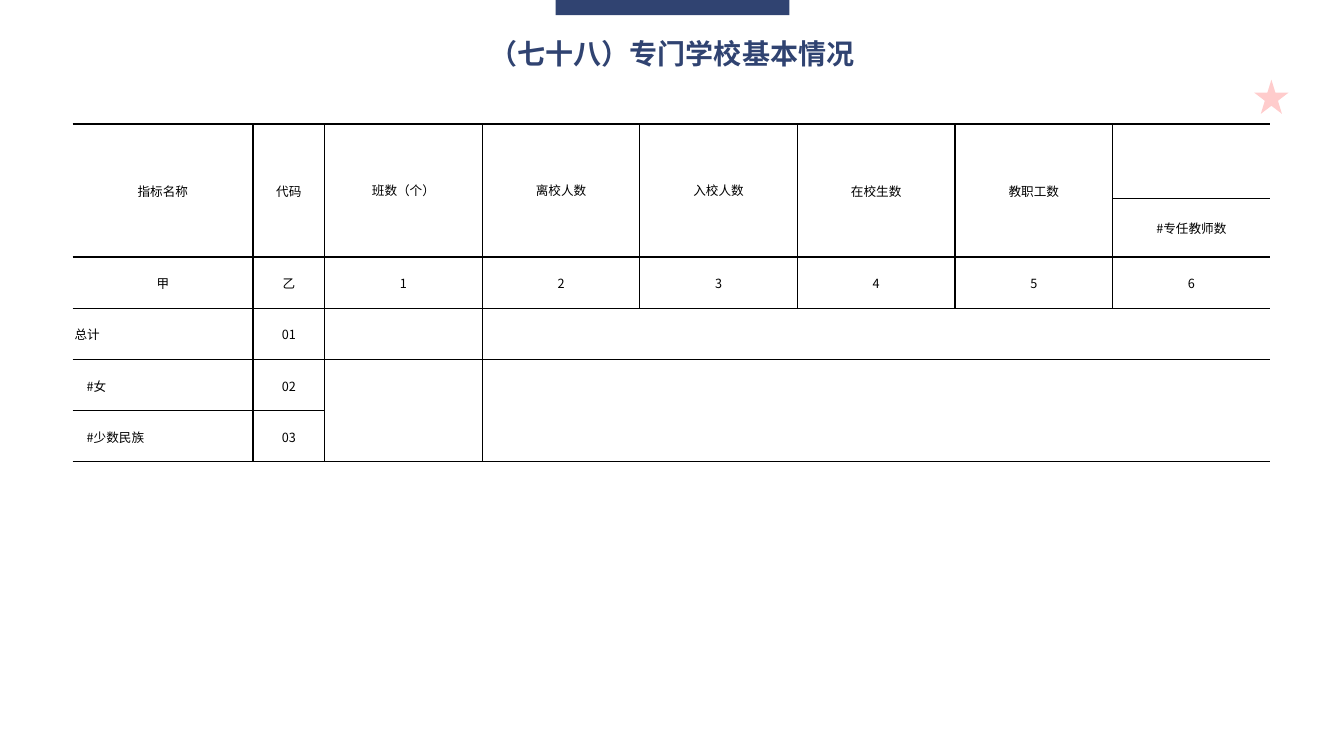
from dataclasses import dataclass
from itertools import groupby

from lxml import etree
from pptx import Presentation
from pptx.dml.color import RGBColor
from pptx.enum.shapes import MSO_SHAPE
from pptx.enum.text import MSO_ANCHOR, MSO_AUTO_SIZE, PP_ALIGN
from pptx.oxml.ns import qn
from pptx.util import Inches, Pt


@dataclass(frozen=True)
class Theme:
    navy: str = "304371"
    red: str = "FF0000"
    black: str = "000000"
    title_font: str = "Arial"
    text_font: str = "Times New Roman"
    code_font: str = "Noto Sans CJK SC"
    title_size: int = 20
    cell_size: int = 9
    line_spacing: int = 14
    border_width: int = 1


THEME = Theme()
NO_GRID_STYLE = "{2D5ABB26-0587-4C30-8999-92F81FD0307C}"

# Table content and geometry
HEADERS = ["指标名称", "代码", "班数（个）", "离校人数", "入校人数", "在校生数", "教职工数", ""]
ROWS = [
    HEADERS,
    [""] * 7 + ["#专任教师数"],
    ["甲", "乙", "1", "2", "3", "4", "5", "6"],
    ["总计", "01"],
    ["#女", "02"],
    ["#少数民族", "03"],
]
NATURAL_SPACING_COLUMNS = (2, 3, 4)
LEFT, TOP, WIDTH, HEIGHT = 0.72, 1.23, 11.88, 3.35
LABEL_WIDTHS = [1.79, 0.71]
HEADER_HEIGHTS = [0.74, 0.58]
COLUMN_WIDTHS = LABEL_WIDTHS + [(WIDTH - sum(LABEL_WIDTHS)) / 6] * 6
ROW_HEIGHTS = HEADER_HEIGHTS + [(HEIGHT - sum(HEADER_HEIGHTS)) / 4] * 4


def style_run(run, font_name, size, color, bold=False):
    run.font.name = font_name
    run.font.size = Pt(size)
    run.font.bold = bold
    run.font.color.rgb = RGBColor.from_string(color)


def add_decoration(slide, kind, left, top, width, height, color, alpha=None):
    shape = slide.shapes.add_shape(
        kind, Inches(left), Inches(top), Inches(width), Inches(height))
    shape.shadow.inherit = False
    shape.fill.solid()
    shape.fill.fore_color.rgb = RGBColor.from_string(color)
    shape.line.fill.background()
    if alpha is not None:
        color_element = shape._element.spPr.find(qn("a:solidFill"))[0]
        etree.SubElement(color_element, qn("a:alpha"), val=str(alpha * 1000))


def add_title(slide, text):
    box = slide.shapes.add_textbox(
        Inches(4.74), Inches(0.31), Inches(3.85), Inches(0.44))
    frame = box.text_frame
    frame.text = text
    frame.word_wrap = False
    frame.auto_size = MSO_AUTO_SIZE.SHAPE_TO_FIT_TEXT
    paragraph = frame.paragraphs[0]
    paragraph.alignment = PP_ALIGN.CENTER
    style_run(paragraph.runs[0], THEME.title_font, THEME.title_size, THEME.navy, True)


def border_sides(row, column):
    """Sides with a line, in the order the cell properties require."""
    if row >= 3 and column >= 2:  # open data area, framed only on the outside
        rules = {"L": column == 2, "T": row == 3, "B": row == 5}
    else:
        rules = {
            "L": column > 0 and (row, column) != (0, 7),
            "R": column < 7 and (row, column) != (0, 6),
            "T": True,
            "B": True,
        }
    return [side for side, drawn in rules.items() if drawn]


def draw_borders(cell, sides):
    properties = cell._tc.get_or_add_tcPr()
    for side in sides:
        line = etree.SubElement(
            properties, qn(f"a:ln{side}"), w=str(Pt(THEME.border_width)))
        fill = etree.SubElement(line, qn("a:solidFill"))
        etree.SubElement(fill, qn("a:srgbClr"), val=THEME.black)


def fill_cell(cell, text, row, column):
    cell.margin_left = cell.margin_right = Inches(0.02)
    cell.margin_top = cell.margin_bottom = 0
    cell.vertical_anchor = MSO_ANCHOR.MIDDLE
    paragraph = cell.text_frame.paragraphs[0]
    is_row_label = row >= 3 and column == 0
    paragraph.alignment = PP_ALIGN.JUSTIFY if is_row_label else PP_ALIGN.CENTER
    if is_row_label and text.startswith("#"):
        paragraph._p.get_or_add_pPr().set("indent", str(Inches(0.12)))
    if row > 0 or column not in NATURAL_SPACING_COLUMNS:
        paragraph.line_spacing = Pt(THEME.line_spacing)
    # Digits and signs use one font, Chinese words the other
    for is_ascii, letters in groupby(text, str.isascii):
        run = paragraph.add_run()
        run.text = "".join(letters)
        font_name = THEME.code_font if is_ascii else THEME.text_font
        style_run(run, font_name, THEME.cell_size, THEME.black)


def add_statistics_table(slide):
    frame = slide.shapes.add_table(
        len(ROW_HEIGHTS), len(COLUMN_WIDTHS),
        Inches(LEFT), Inches(TOP), Inches(WIDTH), Inches(HEIGHT))
    table = frame.table
    table.first_row = table.horz_banding = False
    table._tbl.tblPr.find(qn("a:tableStyleId")).text = NO_GRID_STYLE
    for column, width in zip(table.columns, COLUMN_WIDTHS):
        column.width = Inches(width)
    for row, height in zip(table.rows, ROW_HEIGHTS):
        row.height = Inches(height)
    for column in range(7):
        table.cell(0, column).merge(table.cell(1, column))

    for row, texts in enumerate(ROWS):
        for column in range(len(COLUMN_WIDTHS)):
            cell = table.cell(row, column)
            if cell.is_spanned:
                continue
            draw_borders(cell, border_sides(row, column))
            cell.fill.background()
            fill_cell(cell, texts[column] if column < len(texts) else "", row, column)


def main():
    presentation = Presentation()
    presentation.slide_width = Inches(13.33)
    presentation.slide_height = Inches(7.5)
    slide = presentation.slides.add_slide(presentation.slide_layouts[6])

    # Decorations
    add_decoration(slide, MSO_SHAPE.STAR_5_POINT, 12.44, 0.79, 0.34, 0.34, THEME.red, 20)
    add_decoration(slide, MSO_SHAPE.RECTANGLE, 5.51, -0.01, 2.32, 0.16, THEME.navy)

    # Title and table
    add_title(slide, "（七十八）专门学校基本情况")
    add_statistics_table(slide)
    presentation.save("out.pptx")


if __name__ == "__main__":
    main()
